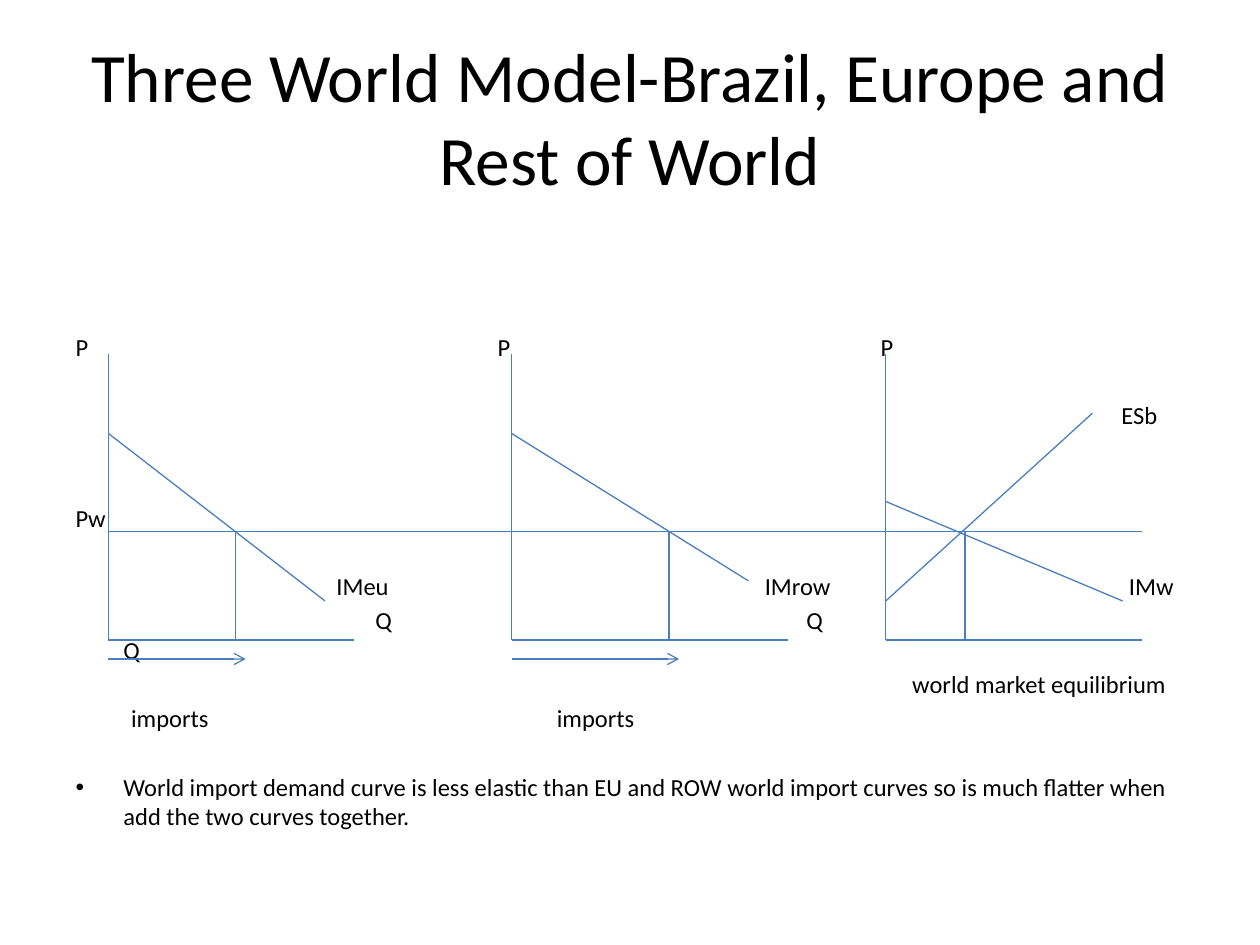
from lxml import etree
from pptx import Presentation
from pptx.dml.color import RGBColor
from pptx.enum import shapes, text
from pptx.oxml import ns
from pptx.util import Inches, Pt


def rgb(hex_color):
    return RGBColor.from_string(hex_color)


class Diagram:
    font = "Calibri"
    ink = "000000"
    stroke = "4B7EBC"
    stroke_width = 0.75
    body_size = 14

    def __init__(self, slide):
        self.slide = slide

    def words(self, content, left, top, width, height, size=body_size,
              align=text.PP_ALIGN.LEFT, inset=0):
        box = self.slide.shapes.add_textbox(
            Inches(left), Inches(top), Inches(width), Inches(height))
        frame = box.text_frame
        frame.word_wrap = True
        frame.vertical_anchor = text.MSO_ANCHOR.MIDDLE
        frame.margin_left = frame.margin_right = Inches(inset)
        frame.margin_top = frame.margin_bottom = 0
        paragraph = frame.paragraphs[0]
        paragraph.alignment = align
        run = paragraph.add_run()
        run.text = content
        run.font.name = self.font
        run.font.size = Pt(size)
        run.font.color.rgb = rgb(self.ink)
        return paragraph

    def label(self, content, left, middle, width=0.8):
        """Place a one-line label, centred vertically on middle."""
        height = 0.3
        self.words(content, left, middle - height / 2, width, height)

    def bullet(self, content, left, top, width, height):
        properties = self.words(content, left, top, width, height)._p.get_or_add_pPr()
        properties.set("marL", str(Inches(0.38)))
        properties.set("indent", str(-Inches(0.38)))
        etree.SubElement(properties, ns.qn("a:buFont")).set("typeface", "Arial")
        etree.SubElement(properties, ns.qn("a:buChar")).set("char", "•")

    def line(self, start, end, arrow=False):
        connector = self.slide.shapes.add_connector(
            shapes.MSO_CONNECTOR.STRAIGHT, *map(Inches, start + end))
        connector.line.color.rgb = rgb(self.stroke)
        connector.line.width = Pt(self.stroke_width)
        if arrow:
            outline = connector.line._get_or_add_ln()
            etree.SubElement(outline, ns.qn("a:tailEnd")).set("type", "arrow")
        etree.SubElement(connector._element.spPr, ns.qn("a:effectLst"))

    def axes(self, origin, right):
        self.line((origin, AXIS_TOP), (origin, BASELINE))
        self.line((origin, BASELINE), (right, BASELINE))


AXIS_TOP, BASELINE = 2.81, 5.08
WORLD_PRICE = 4.22
IMPORTS_Y = 5.23
EU, ROW, WORLD = 0.86, 4.06, 7.03

AXIS_ENDS = [(EU, 2.81), (ROW, 6.25), (WORLD, 9.06)]
CURVES = [
    ((EU, 3.44), (2.58, 4.77)),
    ((ROW, 3.44), (5.94, 4.61)),
    ((WORLD, 4.77), (8.67, 3.28)),
    ((WORLD, 3.98), (8.91, 4.77)),
]
QUANTITIES = [1.87, 5.31, 7.66]
IMPORT_ARROWS = [(EU, 1.95), (ROW, 5.39)]

# Vertical middle of each row of labels: (label, left) pairs
LABEL_ROWS = {
    2.75: [("P", 0.6), ("P", 3.95), ("P", 6.99)],
    3.29: [("ESb", 8.9)],
    4.11: [("Pw", 0.6)],
    4.65: [("IMeu", 2.67), ("IMrow", 6.07), ("IMw", 8.96)],
    4.92: [("Q", 2.98), ("Q", 6.4)],
    5.16: [("Q", 0.98)],
    5.7: [("imports", 1.04), ("imports", 4.42)],
}


def main():
    presentation = Presentation()
    presentation.slide_width = Inches(10)
    presentation.slide_height = Inches(7.5)
    diagram = Diagram(presentation.slides.add_slide(presentation.slide_layouts[6]))

    diagram.words("Three World Model-Brazil, Europe and Rest of World",
                  0.5, 0.3, 9, 1.25, size=39.6,
                  align=text.PP_ALIGN.CENTER, inset=0.1)

    for middle, labels in LABEL_ROWS.items():
        for content, left in labels:
            diagram.label(content, left, middle)
    diagram.label("world market equilibrium", 7.24, 5.43, width=2.4)
    diagram.bullet("World import demand curve is less elastic than EU and ROW "
                   "world import curves so is much flatter when add the two "
                   "curves together.", 0.6, 6.1, 8.8, 0.52)

    for origin, right in AXIS_ENDS:
        diagram.axes(origin, right)
    for start, end in CURVES:
        diagram.line(start, end)
    diagram.line((EU, WORLD_PRICE), (9.06, WORLD_PRICE))
    for quantity in QUANTITIES:
        diagram.line((quantity, WORLD_PRICE), (quantity, BASELINE))
    for origin, tip in IMPORT_ARROWS:
        diagram.line((origin, IMPORTS_Y), (tip, IMPORTS_Y), arrow=True)

    presentation.save("out.pptx")


if __name__ == "__main__":
    main()
